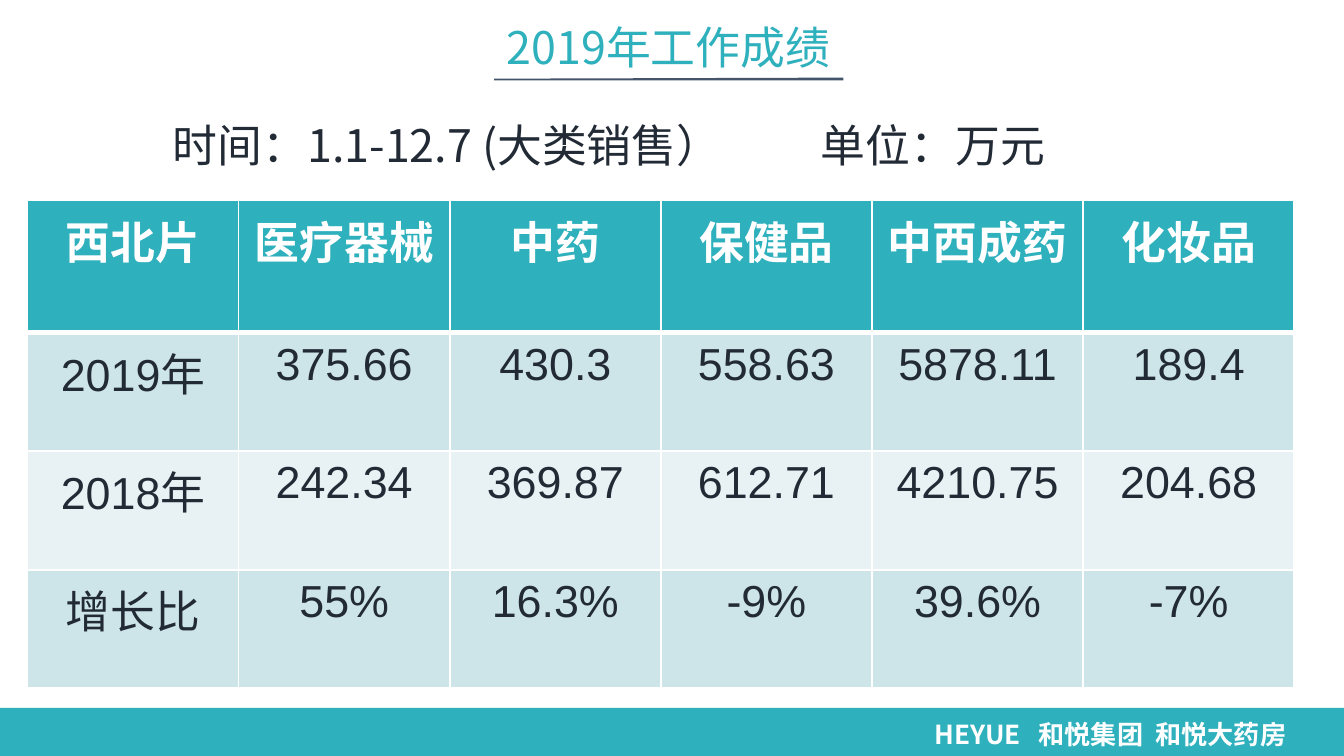
"""Build the 2019 sales results slide with its category table."""
from itertools import zip_longest

from lxml.etree import SubElement
from pptx import Presentation
from pptx.dml.color import RGBColor
from pptx.enum.shapes import MSO_CONNECTOR as Connector, MSO_SHAPE as Shape
from pptx.enum.text import MSO_ANCHOR as Anchor, MSO_AUTO_SIZE as AutoSize, PP_ALIGN as Align
from pptx.oxml.ns import qn
from pptx.util import Cm, Pt

COLORS = {"teal": "2EB0BD", "navy": "44546A", "ink": "222A35", "white": "FFFFFF",
          "band": "CDE4E8", "pale": "E8F2F4"}
CJK_FONT = "Noto Sans CJK SC"
ROWS = [
    ["西北片", "医疗器械", "中药", "保健品", "中西成药", "化妆品"],
    ["2019年", "375.66", "430.3", "558.63", "5878.11", "189.4"],
    ["2018年", "242.34", "369.87", "612.71", "4210.75", "204.68"],
    ["增长比", "55%", "16.3%", "-9%", "39.6%", "-7%"],
]


def rgb(name):
    return RGBColor.from_string(COLORS[name])


def write(frame, *texts, size=24, font=CJK_FONT, color="ink", bold=False,
          align=Align.LEFT, spacing=None, indent=0, gaps=()):
    paragraph = frame.paragraphs[0]
    paragraph.alignment = align
    paragraph.line_spacing = spacing
    properties = paragraph._p.get_or_add_pPr()
    properties.set("marL", "0")
    properties.set("indent", str(Cm(indent)))
    for text, gap in zip_longest(texts, gaps):
        for content, extra in ((text, 0), (" ", gap)):
            if extra is None:
                continue
            run = paragraph.add_run()
            run.text = content
            run.font.size = Pt(size)
            run.font.name = font
            run.font.bold = bold
            run.font.color.rgb = rgb(color)
            run_properties = run._r.get_or_add_rPr()
            SubElement(run_properties, qn("a:ea"), typeface=CJK_FONT)
            if extra:
                run_properties.set("spc", str(round(extra * 100)))


class SlideBuilder:
    """Holds the style and the current slide, and adds elements to it."""

    def __init__(self, presentation):
        self.slide = presentation.slides.add_slide(presentation.slide_layouts[5])
        self.shapes = self.slide.shapes

    def prepare(self, frame, horizontal=0.18, vertical=0.1, anchor=Anchor.TOP):
        frame.word_wrap = True
        frame.auto_size = AutoSize.NONE
        frame.margin_left = frame.margin_right = Cm(horizontal)
        frame.margin_top = frame.margin_bottom = Cm(vertical)
        frame.vertical_anchor = anchor
        return frame

    def title(self, text, left, top, width, height):
        title = self.shapes.title
        title.left, title.top, title.width, title.height = map(Cm, (left, top, width, height))
        frame = self.prepare(title.text_frame, 0, 0.13, Anchor.MIDDLE)
        write(frame, text, color="teal", align=Align.CENTER, spacing=0.9)

    def panel(self, kind, fill, left, top, width, height):
        shape = self.shapes.add_shape(kind, *map(Cm, (left, top, width, height)))
        shape.shadow.inherit = False
        shape.fill.solid()
        shape.fill.fore_color.rgb = rgb(fill)
        shape.line.fill.background()
        return self.prepare(shape.text_frame)

    def text(self, texts, left, top, width, height, **style):
        box = self.shapes.add_textbox(*map(Cm, (left, top, width, height)))
        write(self.prepare(box.text_frame), *texts, **style)

    def line(self, color, width, *ends):
        line = self.shapes.add_connector(Connector.STRAIGHT, *map(Cm, ends))
        line.line.color.rgb = rgb(color)
        line.line.width = Pt(width)
        SubElement(line._element.spPr, qn("a:effectLst"))

    def borders(self, cell, bottom):
        properties = cell._tc.get_or_add_tcPr()
        for side, width in (("L", 1), ("R", 1), ("T", 1), ("B", bottom)):
            edge = SubElement(properties, qn(f"a:ln{side}"), w=str(Pt(width)))
            fill = SubElement(edge, qn("a:solidFill"))
            SubElement(fill, qn("a:srgbClr"), val=COLORS["white"])

    def table(self, rows, left, top, width, heights):
        frame = self.shapes.add_table(len(rows), len(rows[0]), Cm(left), Cm(top),
                                      Cm(width), Cm(sum(heights)))
        table = frame.table
        for index, (values, height) in enumerate(zip(rows, heights)):
            header = index == 0
            fill = "teal" if header else "band" if index % 2 else "pale"
            table.rows[index].height = Cm(height)
            for cell, value in zip(table.rows[index].cells, values):
                self.borders(cell, 3 if header else 1)
                cell.fill.solid()
                cell.fill.fore_color.rgb = rgb(fill)
                write(cell.text_frame, value, font="Arial", bold=header,
                      color="white" if header else "ink", align=Align.CENTER)


def main():
    presentation = Presentation()
    presentation.slide_width, presentation.slide_height = Cm(25.4), Cm(14.29)
    builder = SlideBuilder(presentation)
    builder.panel(Shape.RECTANGLE, "teal", 0, 13.38, 25.4, 0.93)
    builder.text(("HEYUE", "和悦集团", "和悦大药房"), 17.48, 13.48, 7.75, 0.8,
                 size=14, color="white", bold=True, gaps=(6.3, 3.2))
    builder.title("2019年工作成绩", 4.3, 0.3, 16.66, 1.27)
    builder.line("navy", 3, 9.34, 1.54, 15.94, 1.52)
    subtitle = builder.panel(Shape.ROUNDED_RECTANGLE, "white", 1.75, 1.52, 20.8, 1.85)
    write(subtitle, "时间：1.1-12.7 (大类销售）", "单位：万元", spacing=1.5, indent=1.25, gaps=(48,))
    builder.table(ROWS, 0.52, 3.79, 23.94, [2.5, 2.24, 2.24, 2.24])
    presentation.save("out.pptx")


if __name__ == "__main__":
    main()
